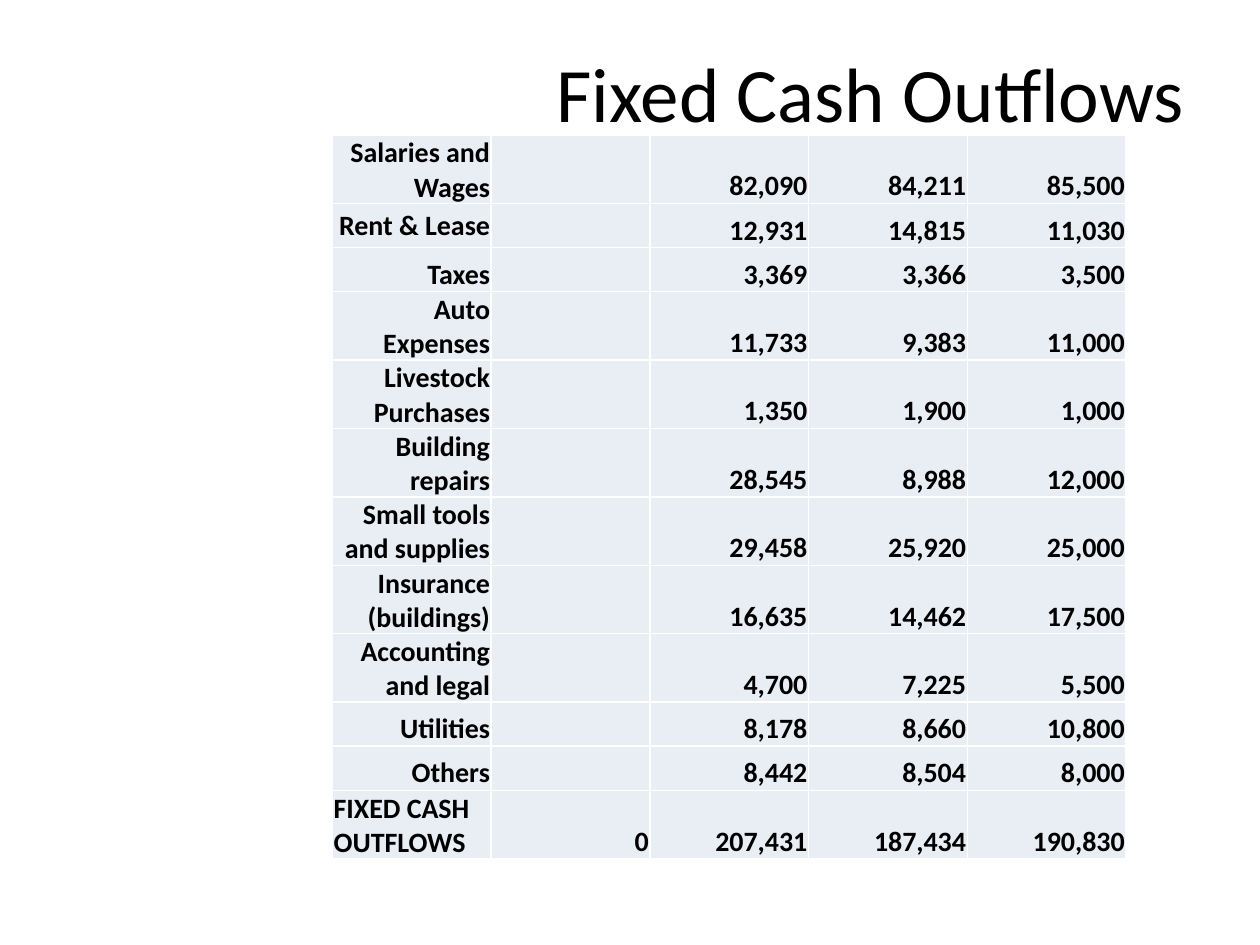
from pptx import Presentation
from pptx.dml.color import RGBColor
from pptx.enum.text import MSO_ANCHOR, PP_ALIGN
from pptx.oxml import parse_xml
from pptx.oxml.ns import nsdecls
from pptx.util import Pt

LEFT, RIGHT = PP_ALIGN.LEFT, PP_ALIGN.RIGHT
TOP, MIDDLE, BOTTOM = MSO_ANCHOR.TOP, MSO_ANCHOR.MIDDLE, MSO_ANCHOR.BOTTOM

BLACK, WHITE, PALE = "000000", "FFFFFF", "E9EDF4"
COL = 90.7
LOW, HIGH = 25.2, 34.6
INSETS = {
    "margin_left": Pt(0.7),
    "margin_right": Pt(0.7),
    "margin_top": Pt(0.7),
    "margin_bottom": Pt(0),
}
TITLE = {"size": Pt(44), "name": "Calibri", "bold": False}
BODY = {"size": Pt(16), "name": "Calibri", "bold": True}

# Row height, then label, blank or total, and three yearly amounts
ROWS = [
    (HIGH, "Salaries and Wages", "", "82,090", "84,211", "85,500"),
    (LOW, "Rent & Lease", "", "12,931", "14,815", "11,030"),
    (LOW, "Taxes", "", "3,369", "3,366", "3,500"),
    (LOW, "Auto Expenses", "", "11,733", "9,383", "11,000"),
    (HIGH, "Livestock Purchases", "", "1,350", "1,900", "1,000"),
    (LOW, "Building repairs", "", "28,545", "8,988", "12,000"),
    (HIGH, "Small tools and supplies", "", "29,458", "25,920", "25,000"),
    (HIGH, "Insurance (buildings)", "", "16,635", "14,462", "17,500"),
    (HIGH, "Accounting and legal", "", "4,700", "7,225", "5,500"),
    (LOW, "Utilities", "", "8,178", "8,660", "10,800"),
    (LOW, "Others", "", "8,442", "8,504", "8,000"),
    (HIGH, "FIXED CASH OUTFLOWS", "0", "207,431", "187,434", "190,830"),
]
# Labels that are not set right and at the bottom
PLACES = {"Rent & Lease": (RIGHT, MIDDLE), "FIXED CASH OUTFLOWS": (LEFT, TOP)}


def color(text):
    return RGBColor.from_string(text)


def assign(item, values):
    for name, value in values.items():
        setattr(item, name, value)


def write(frame, text, style, align):
    para = frame.paragraphs[0]
    para.alignment = align
    run = para.add_run()
    run.text = text
    assign(run.font, style)
    run.font.color.rgb = color(BLACK)


def add_title(slide, text):
    box = slide.shapes.add_textbox(Pt(36), Pt(21.6), Pt(648), Pt(61.2))
    frame = box.text_frame
    assign(frame, {"word_wrap": True, "vertical_anchor": MIDDLE})
    write(frame, text, TITLE, RIGHT)


def add_edges(cell):
    """Draw a thin white line on each side, placed before the fill."""
    props = cell._tc.get_or_add_tcPr()
    for i, side in enumerate("LRTB"):
        props.insert(i, parse_xml(
            f'<a:ln{side} {nsdecls("a")} w="{Pt(1)}"><a:solidFill>'
            f'<a:srgbClr val="{WHITE}"/></a:solidFill></a:ln{side}>'))


def fill_cell(cell, text):
    align, anchor = PLACES.get(text, (RIGHT, BOTTOM))
    assign(cell, INSETS)
    cell.vertical_anchor = anchor
    cell.fill.solid()
    cell.fill.fore_color.rgb = color(PALE)
    add_edges(cell)
    if text:
        write(cell.text_frame, text, BODY, align)


def add_grid(slide):
    count = len(ROWS[0]) - 1
    shape = slide.shapes.add_table(
        len(ROWS), count, Pt(190), Pt(77.2), Pt(COL * count), Pt(411))
    table = shape.table
    assign(table, {"first_row": False, "horz_banding": False})
    for col in table.columns:
        col.width = Pt(COL)
    for row, (height, *texts) in zip(table.rows, ROWS):
        row.height = Pt(height)
        for cell, text in zip(row.cells, texts):
            fill_cell(cell, text)
    # Wrapped labels make the drawn rows taller than their minimum
    shape.height = Pt(411)


def main():
    deck = Presentation()
    assign(deck, {"slide_width": Pt(720), "slide_height": Pt(540)})
    slide = deck.slides.add_slide(deck.slide_layouts[6])
    add_title(slide, "Fixed Cash Outflows")
    add_grid(slide)
    deck.save("out.pptx")


if __name__ == "__main__":
    main()
